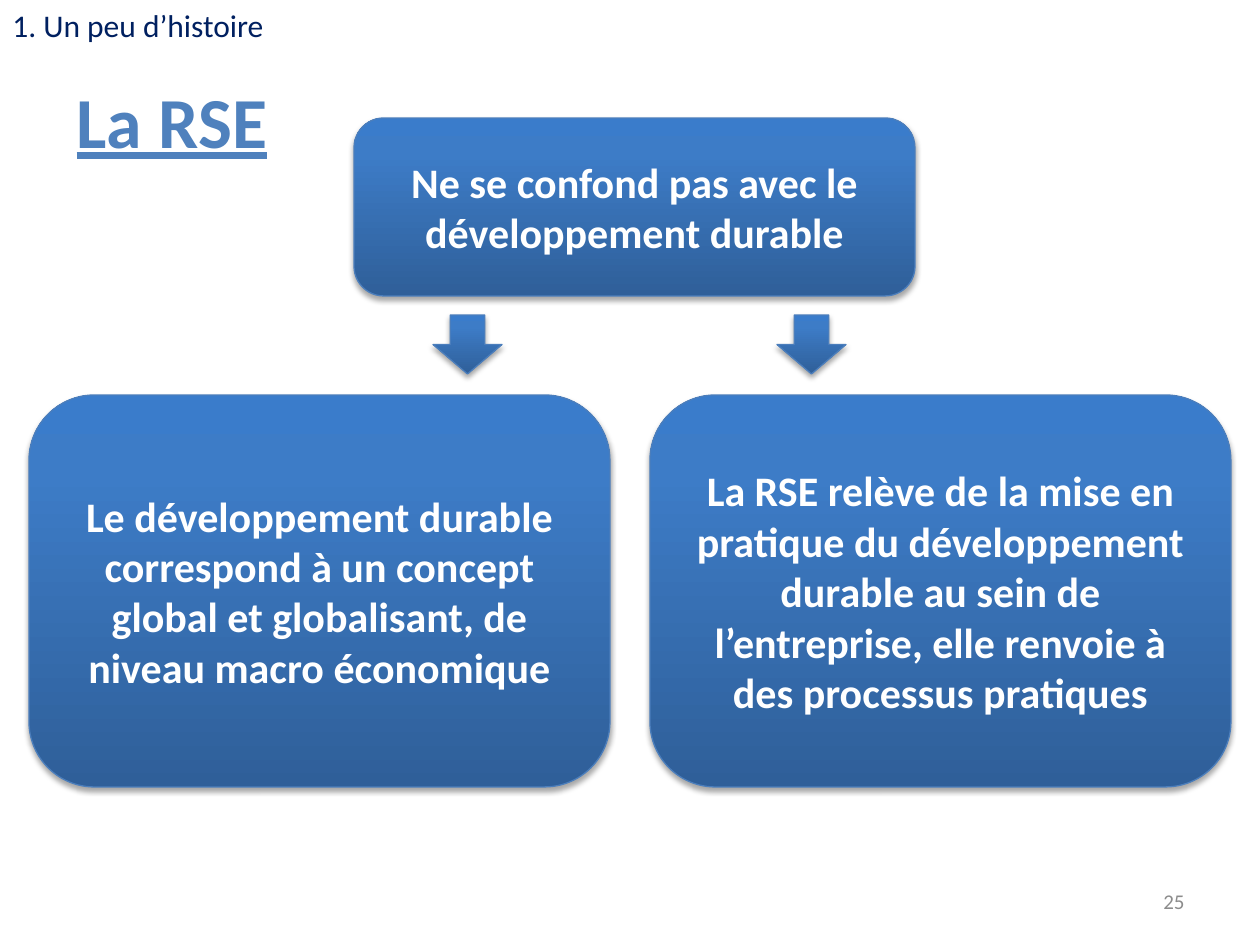
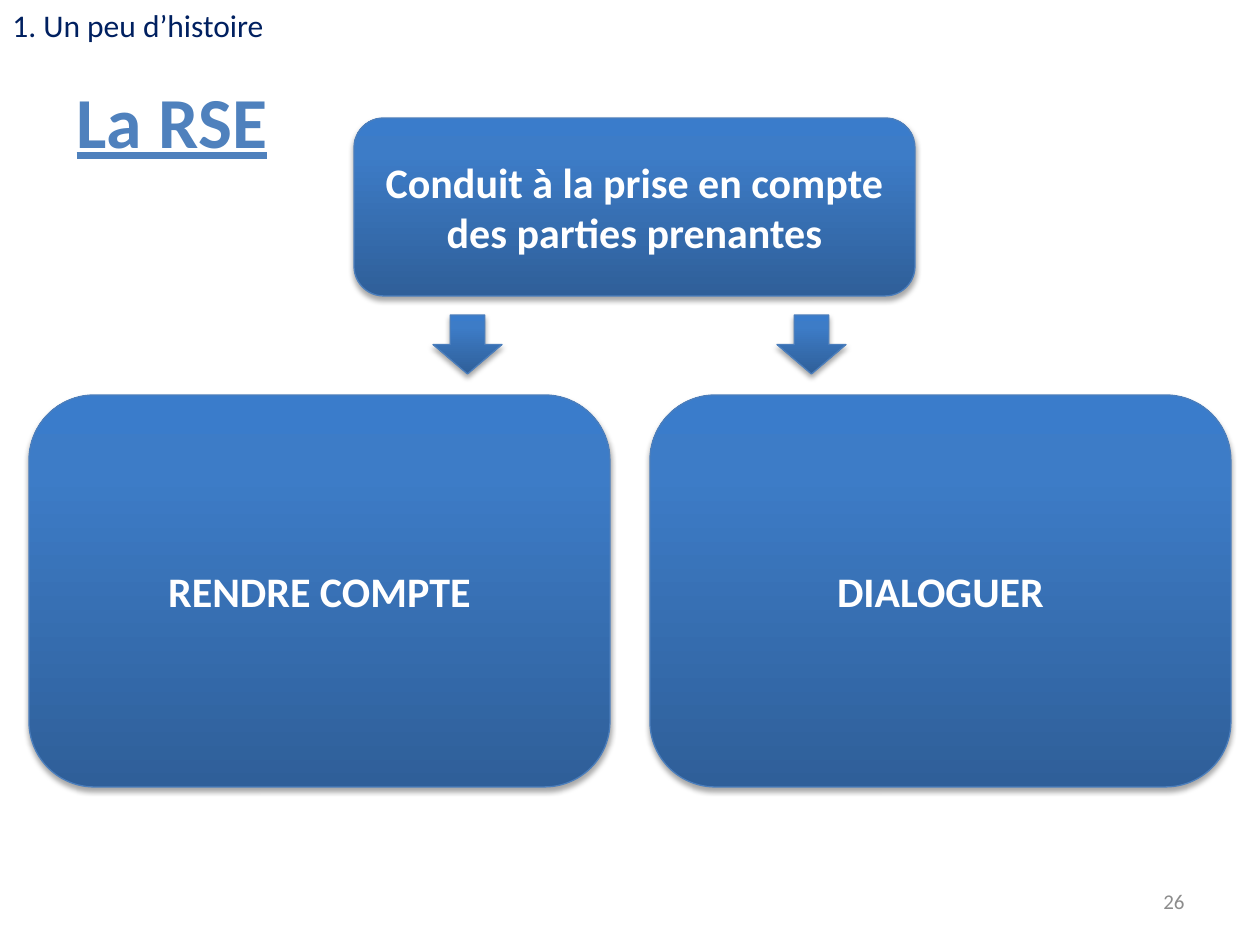
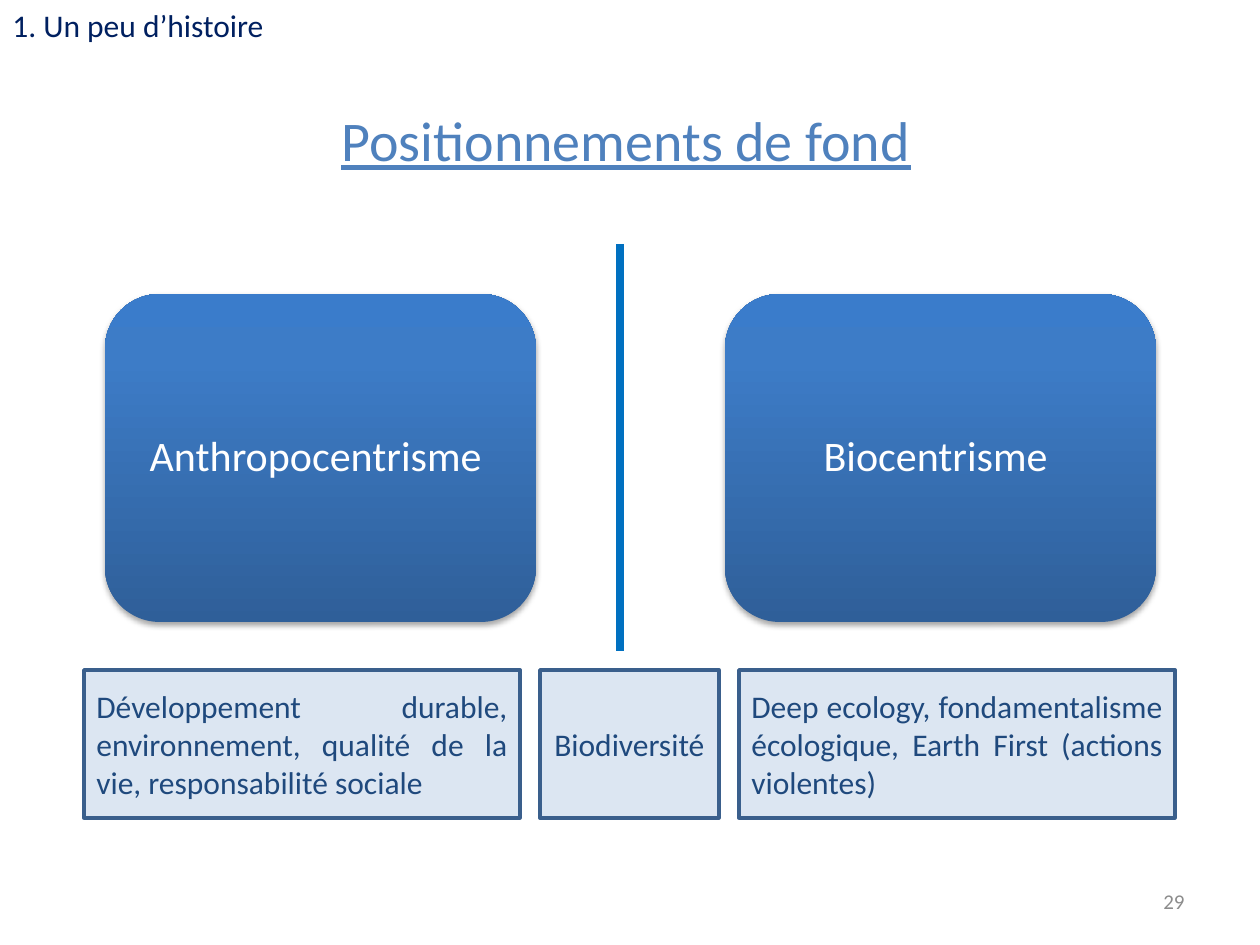
from copy import deepcopy

from pptx import Presentation
from pptx.dml.color import RGBColor
from pptx.enum.shapes import MSO_CONNECTOR, MSO_SHAPE as SHAPE
from pptx.enum.text import MSO_ANCHOR as ANCHOR, MSO_AUTO_SIZE as AUTO, PP_ALIGN as ALIGN
from pptx.oxml import parse_xml
from pptx.oxml.ns import nsdecls, qn
from pptx.util import Emu, Pt

FONT = "Calibri"
NAVY, BLUE, WHITE, GREY = "002060", "4F81BD", "FFFFFF", "8C8C8C"
EDGE, RULE = "4B7EBC", "0070C0"
NOTE_FILL, NOTE_EDGE, NOTE_TEXT = "DCE6F2", "3A5F8C", "1F497D"
GRADIENT = [(0, "2F5F99"), (0.8, "3D7CC7"), (1, "3A7CCB")]
SHADOW = (
    f'<a:outerShdw {nsdecls("a")} blurRad="39370" dist="22860" dir="5400000" rotWithShape="0">'
    '<a:srgbClr val="000000"><a:alpha val="35000"/></a:srgbClr></a:outerShdw>'
)
HEADER = "1. Un peu d’histoire"


def px(n):
    return Emu(round(n * 914400 / 126))


def place(box):
    return [px(n) for n in box]


def rgb(color):
    return RGBColor.from_string(color)


def write(tf, text, size, color, align=ALIGN.LEFT, bold=False, underline=False,
          before=0, spacing=None, anchor=ANCHOR.MIDDLE):
    tf.word_wrap = True
    tf.auto_size = AUTO.NONE
    tf.vertical_anchor = anchor
    p = tf.paragraphs[0]
    p.text = text
    p.alignment = align
    p.space_before = Pt(before)
    p.line_spacing = spacing
    font = p.font
    font.name, font.size, font.color.rgb = FONT, Pt(size), rgb(color)
    font.bold, font.underline = bold, underline


def add_label(slide, box, text, size, color, **style):
    tf = slide.shapes.add_textbox(*place(box)).text_frame
    write(tf, text, size, color, **style)
    return tf


def add_title(slide, box, text, size, **style):
    title = slide.shapes.title
    title.left, title.top, title.width, title.height = place(box)
    write(title.text_frame, text, size, BLUE, underline=True, **style)


def add_outline(sp, color, width):
    sp.line.color.rgb = rgb(color)
    sp.line.width = Pt(width)


def add_glossy(slide, kind, box, edge=True):
    sp = slide.shapes.add_shape(kind, *place(box))
    sp.fill.gradient()
    sp.fill.gradient_angle = 90
    stops = next(sp.element.iter(qn("a:gsLst")))
    stops.append(deepcopy(stops[0]))
    for stop, (position, color) in zip(sp.fill.gradient_stops, GRADIENT):
        stop.position = position
        stop.color.rgb = rgb(color)
    sp.shadow.inherit = False
    sp.element.spPr.find(qn("a:effectLst")).append(parse_xml(SHADOW))
    if edge:
        add_outline(sp, EDGE, 0.75)
    else:
        sp.line.fill.background()
    return sp


def add_card(slide, box, text, edge=True, **style):
    sp = add_glossy(slide, SHAPE.ROUNDED_RECTANGLE, box, edge)
    write(sp.text_frame, text, 24, WHITE, align=ALIGN.CENTER, **style)


def add_note(slide, box, text, align):
    sp = slide.shapes.add_shape(SHAPE.RECTANGLE, *place(box))
    sp.shadow.inherit = False
    sp.fill.solid()
    sp.fill.fore_color.rgb = rgb(NOTE_FILL)
    add_outline(sp, NOTE_EDGE, 2)
    write(sp.text_frame, text, 18, NOTE_TEXT, align=align, before=5.8)


def row(box, widths, gap):
    left, top, _, height = box
    for width in widths:
        yield left, top, width, height
        left += width + gap


def add_divider(slide, x, top, bottom):
    line = slide.shapes.add_connector(MSO_CONNECTOR.STRAIGHT, px(x), px(top), px(x), px(bottom))
    add_outline(line, RULE, 4.5)
    line.element.spPr.append(parse_xml(f'<a:effectLst {nsdecls("a")}/>'))


def new_slide(prs, number):
    slide = prs.slides.add_slide(prs.slide_layouts[5])
    add_label(slide, (903, 876, 294, 50), str(number), 12, GREY, align=ALIGN.RIGHT)
    tf = add_label(slide, (0, 0, 1131, 50), HEADER, 18, NAVY, anchor=ANCHOR.TOP)
    tf.auto_size = AUTO.SHAPE_TO_FIT_TEXT
    return slide


def add_split(slide, box, idea, branches):
    left, top, width, height = box
    add_card(slide, (left + 325, top, 561, 178), idea, bold=True)
    for arrow in row((left + 404, top + 197, width, 59), [69, 69], 275):
        add_glossy(slide, SHAPE.DOWN_ARROW, arrow)
    gap = 40
    card_width = (width - gap) // 2
    for card, text in zip(row((left, top + 277, width, height - 277), [card_width] * 2, gap), branches):
        add_card(slide, card, text, bold=True)


def rse_slide(prs, number, idea, branches):
    slide = new_slide(prs, number)
    add_title(slide, (64, 55, 1134, 130), "La RSE", 41, bold=True)
    add_split(slide, (29, 118, 1202, 669), idea, branches)


def add_positions(slide, box, names):
    left, top, width, height = box
    add_divider(slide, left + 515, top - 50, top + height + 29)
    card_width = 431
    for card, name in zip(row(box, [card_width] * 2, width - 2 * card_width), names):
        add_card(slide, card, name, edge=False, before=5.8, spacing=0.9)


def add_notes(slide, box, notes):
    gap, middle = 20, 179
    side = (box[2] - middle - 2 * gap) // 2
    for note, (text, align) in zip(row(box, [side, middle, side], gap), notes):
        add_note(slide, note, text, align)


def positions_slide(prs, number):
    slide = new_slide(prs, number)
    add_title(slide, (59, 49, 1134, 189), "Positionnements de fond", 32,
              align=ALIGN.CENTER, before=5.8, spacing=0.9)
    add_positions(slide, (105, 294, 1051, 328), ["Anthropocentrisme ", "Biocentrisme "])
    add_notes(slide, (84, 670, 1091, 148), [
        ("Développement durable, environnement, qualité de la vie, responsabilité sociale", ALIGN.JUSTIFY),
        ("Biodiversité", ALIGN.CENTER),
        ("Deep ecology, fondamentalisme écologique, Earth First (actions violentes)", ALIGN.JUSTIFY),
    ])


def main():
    prs = Presentation()
    prs.slide_width, prs.slide_height = px(1260), px(945)
    rse_slide(prs, 25, "Ne se confond pas avec le développement durable", [
        "Le développement durable correspond à un concept global et globalisant, "
        "de niveau macro économique",
        "La RSE relève de la mise en pratique du développement durable au sein de "
        "l’entreprise, elle renvoie à des processus pratiques",
    ])
    rse_slide(prs, 26, "Conduit à la prise en compte des parties prenantes",
              ["RENDRE COMPTE", "DIALOGUER"])
    positions_slide(prs, 29)
    prs.save("out.pptx")


if __name__ == "__main__":
    main()
